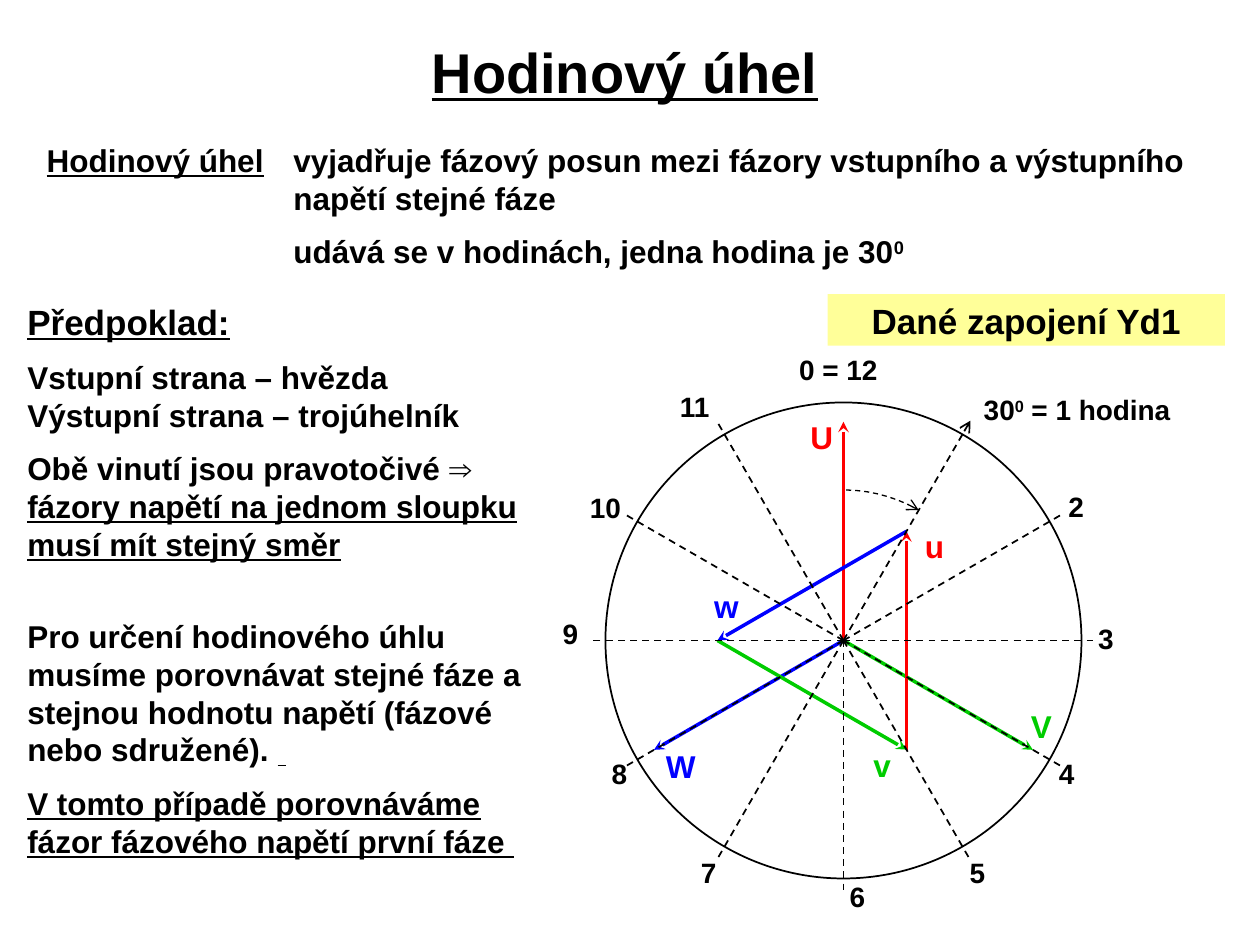
from math import cos, radians, sin
from lxml.etree import SubElement
from pptx import Presentation
from pptx.dml.color import RGBColor
from pptx.enum.dml import MSO_LINE
from pptx.enum.shapes import MSO_CONNECTOR, MSO_SHAPE
from pptx.enum.text import MSO_ANCHOR, MSO_AUTO_SIZE, PP_ALIGN
from pptx.oxml.ns import qn
from pptx.util import Pt


def hue(code):
    return RGBColor.from_string(code)


def text(words, box=None, at=None, size=18, head=None, color="000000", align="l",
         wrap=True, pad=(7.2, 3.6), gaps=(), anchor=MSO_ANCHOR.TOP, hang=0):
    if box is None:
        box = slide.shapes.add_textbox(0, 0, 0, 0)
    box.left, box.top, box.width, box.height = [Pt(v) for v in at]
    frame = box.text_frame
    frame.auto_size = MSO_AUTO_SIZE.NONE
    frame.word_wrap = wrap
    frame.vertical_anchor = anchor
    frame.margin_left = frame.margin_right = Pt(pad[0])
    frame.margin_top = frame.margin_bottom = Pt(pad[1])
    for i, line in enumerate(words.split("\n")):
        para = frame.add_paragraph() if i else frame.paragraphs[0]
        para.alignment = PP_ALIGN.CENTER if align == "c" else PP_ALIGN.LEFT
        para.space_before = Pt(gaps[i] if gaps else 9 * (i > 0))
        props = para._p.get_or_add_pPr()
        props.set("marL", str(Pt(hang)))
        props.set("indent", str(-Pt(hang)))
        SubElement(props, qn("a:buNone"))
        for j, part in enumerate(line.split("_")):
            for k, piece in enumerate(part.split("^")):
                if not piece:
                    continue
                run = para.add_run()
                run.text = piece
                font = run.font
                font.name = "Arial"
                font.size = Pt(head if head and i == 0 else size)
                font.bold = True
                font.underline = j % 2 == 1
                font.color.rgb = hue(color)
                if k % 2:
                    font._element.set("baseline", "30000")


deck = Presentation()
deck.slide_width, deck.slide_height = Pt(720), Pt(540)
slide = deck.slides.add_slide(deck.slide_layouts[1])
title, body = slide.placeholders

text("_Hodinový úhel_", box=title, at=(42.5, 15, 629, 51), size=32, align="c",
     anchor=MSO_ANCHOR.MIDDLE)
text("_Hodinový úhel_ \tvyjadřuje fázový posun mezi fázory vstupního a výstupního "
     "napětí stejné fáze\n\tudává se v hodinách, jedna hodina je 30^0^",
     box=body, at=(19.5, 77, 680, 83), hang=141)

black, red, green, blue = "000000", "FF0000", "00CC00", "0000FF"
mid, top = 482, 366
rim = 136
dial = slide.shapes.add_shape(MSO_SHAPE.OVAL, Pt(mid - rim), Pt(top - rim),
                              Pt(2 * rim), Pt(2 * rim))
dial.shadow.inherit = False
dial.fill.background()
dial.line.color.rgb = hue(black)
dial.line.width = Pt(1)

star, delta, spoke = 125, 72, 145
rays = [
    (red, "stealth", 0, 0, 0, star),
    (green, "stealth", 0, 0, 4, star),
    (blue, "stealth", 0, 0, 8, star),
    (red, "stealth", 5, delta, 1, delta),
    (green, "stealth", 9, delta, 5, delta),
    (blue, "stealth", 1, delta, 9, delta),
]
rays += [(black, "arrow" if h == 1 else None, 0, 0, h, spoke) for h in range(1, 12)]
for color, tip, *polar in rays:
    ends = []
    for hour, far in (polar[:2], polar[2:]):
        turn = radians(30 * hour)
        ends += [Pt(mid + far * sin(turn)), Pt(top - far * cos(turn))]
    ray = slide.shapes.add_connector(MSO_CONNECTOR.STRAIGHT, *ends)
    ray.line.color.rgb = hue(color)
    ray.line.width = Pt(1 if color == black else 2)
    if color == black:
        ray.line.dash_style = MSO_LINE.DASH
    props = ray._element.spPr
    if tip:
        SubElement(props.find(qn("a:ln")), qn("a:tailEnd"), type=tip)
    SubElement(props, qn("a:effectLst"))

sweep = [radians(a) for a in range(1, 31, 4)] + [radians(30)]
bend = [(Pt(mid + 86 * sin(a)), Pt(top - 86 * cos(a))) for a in sweep]
path = slide.shapes.build_freeform(*bend[0])
path.add_line_segments(bend[1:], close=False)
arc = path.convert_to_shape()
arc.shadow.inherit = False
arc.fill.background()
arc.line.color.rgb = hue(black)
arc.line.width = Pt(0.75)
arc.line.dash_style = MSO_LINE.DASH
SubElement(arc._element.spPr.find(qn("a:ln")), qn("a:tailEnd"), type="arrow")

hours = [
    ("0 = 12", 479, 198), ("30^0^ = 1 hodina", 615.5, 221), ("2", 615, 276),
    ("3", 632, 351.5), ("4", 609.5, 428.5), ("5", 558.5, 485.5), ("6", 490, 499),
    ("7", 405, 485.5), ("8", 354, 428.5), ("9", 326, 349), ("10", 346, 277),
    ("11", 397, 219),
]
for name, x, y in hours:
    text(name, at=(x - 62, y, 124, 26.5), size=16, align="c")

tags = [
    ("U", 469.5, 236, red), ("V", 595, 401, green), ("W", 389, 424, blue),
    ("u", 534, 298, red), ("v", 504, 423.5, green), ("w", 415, 332.5, blue),
]
for name, x, y, color in tags:
    text(name, at=(x - 12, y, 24, 27), color=color, align="c", wrap=False, pad=(3, 3))

text("_Předpoklad:_\nVstupní strana – hvězda\nVýstupní strana – trojúhelník\n"
     "Obě vinutí jsou pravotočivé ⇒ _fázory napětí na jednom sloupku musí mít stejný směr_",
     at=(8.5, 168, 303, 161), head=20, gaps=(0, 9, 0, 9))
text("Pro určení hodinového úhlu musíme porovnávat stejné fáze a stejnou hodnotu "
     "napětí (fázové nebo sdružené). _ _\n"
     "_V tomto případě porovnáváme fázor fázového napětí první fáze _",
     at=(8.5, 349, 303, 148))

badge = slide.shapes.add_shape(MSO_SHAPE.RECTANGLE, 0, 0, 0, 0)
badge.shadow.inherit = False
badge.fill.solid()
badge.fill.fore_color.rgb = hue("FFFF99")
badge.line.fill.background()
text("Dané zapojení Yd1", box=badge, at=(473, 168, 227, 29.5), size=20, align="c",
     pad=(3, 3))

deck.save("out.pptx")
